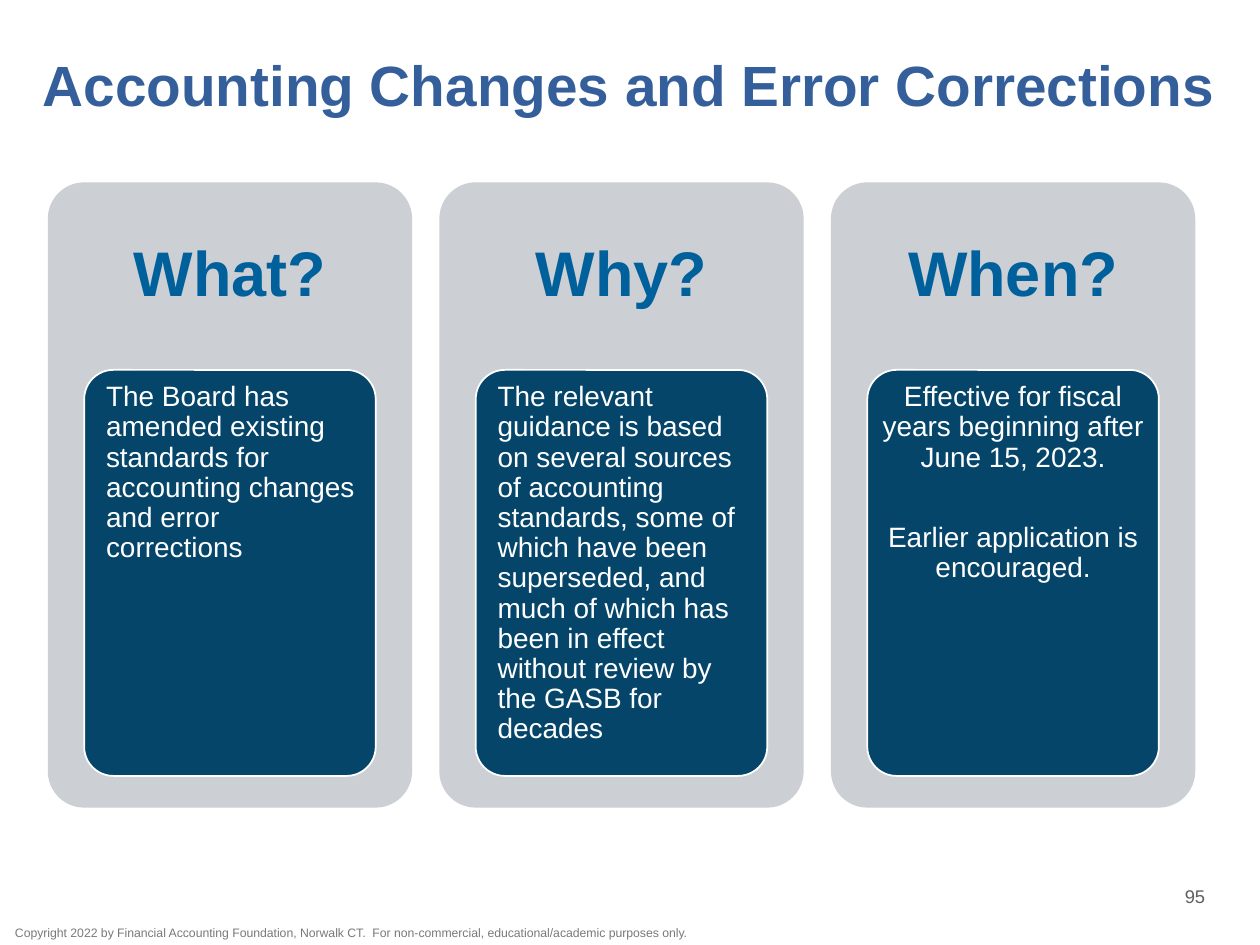
from dataclasses import dataclass

import pptx
import pptx.dml.color
import pptx.enum.shapes
import pptx.enum.text
import pptx.util

Pt = pptx.util.Pt
ALIGN = pptx.enum.text.PP_ALIGN
ANCHOR = pptx.enum.text.MSO_ANCHOR

COLORS = {
    "title": "355F9A",
    "heading": "00609C",
    "card": "CCCFD4",
    "panel": "054569",
    "white": "FFFFFF",
    "number": "5F5F5F",
    "copyright": "78797B",
}


@dataclass(frozen=True)
class Area:
    left: float
    top: float
    width: float
    height: float

    def points(self) -> tuple:
        return Pt(self.left), Pt(self.top), Pt(self.width), Pt(self.height)


@dataclass(frozen=True)
class Style:
    size: float
    color: str
    bold: bool = False
    align: ALIGN = ALIGN.LEFT
    anchor: ANCHOR = ANCHOR.TOP
    insets: tuple = (0, 0, 0, 0)
    line_spacing: object = 1.0
    space_after: float = 0
    indent: float = 0


@dataclass(frozen=True)
class Card:
    heading: str
    body: tuple
    style: Style


TITLE = Style(32.4, "title", bold=True, anchor=ANCHOR.MIDDLE,
              insets=(7.2, 0, 0, 0), line_spacing=Pt(37))
HEADING = Style(36, "heading", bold=True, align=ALIGN.CENTER, anchor=ANCHOR.MIDDLE,
                insets=(10.8, 10.8, 10.8, 10.8), line_spacing=0.9)
BODY_INSETS = (3.2, 2.4, 3.2, 2.4)
BODY = Style(16, "white", insets=BODY_INSETS, line_spacing=0.9, indent=4.5)
CENTERED_BODY = Style(16, "white", align=ALIGN.CENTER, insets=BODY_INSETS,
                      line_spacing=0.9, space_after=28.5)
NUMBER = Style(10.5, "number", align=ALIGN.CENTER, anchor=ANCHOR.MIDDLE,
               insets=(7.2, 3.6, 7.2, 3.6))
COPYRIGHT = Style(7, "copyright")

CARDS = (
    Card("What?", ("The Board has amended existing standards for accounting changes "
                   "and error corrections",), BODY),
    Card("Why?", ("The relevant guidance is based on several sources of accounting "
                  "standards, some of which have been superseded, and much of which "
                  "has been in effect without review by the GASB for decades",), BODY),
    Card("When?", ("Effective for fiscal years beginning after June 15, 2023.",
                   "Earlier application is encouraged."), CENTERED_BODY),
)
CARD_LEFT = 27.3
CARD_TOP = 104.2
CARD_WIDTH = 208.2
CARD_HEIGHT = 357.3
CARD_STEP = 223.75
HEADING_HEIGHT = 107.2
PANEL_MARGIN = 20.8
PANEL_HEIGHT = 232
TEXT_MARGIN = 4.8


def color(name: str) -> pptx.dml.color.RGBColor:
    return pptx.dml.color.RGBColor.from_string(COLORS[name])


def add_text(page, area: Area, texts: tuple, style: Style) -> None:
    frame = page.shapes.add_textbox(*area.points()).text_frame
    frame.word_wrap = True
    frame.vertical_anchor = style.anchor
    (frame.margin_left, frame.margin_top,
     frame.margin_right, frame.margin_bottom) = map(Pt, style.insets)
    for index, text in enumerate(texts):
        para = frame.paragraphs[0] if index == 0 else frame.add_paragraph()
        para.alignment = style.align
        para.line_spacing = style.line_spacing
        para.space_after = Pt(style.space_after)
        if style.indent:
            para._p.get_or_add_pPr().set("marL", str(Pt(style.indent)))
        span = para.add_run()
        span.text = text
        span.font.name = "Arial"
        span.font.size = Pt(style.size)
        span.font.bold = style.bold
        span.font.color.rgb = color(style.color)


def add_rounded(page, area: Area, fill: str, line: str = "") -> None:
    shape = page.shapes.add_shape(
        pptx.enum.shapes.MSO_SHAPE.ROUNDED_RECTANGLE, *area.points())
    shape.adjustments[0] = 0.1
    shape.shadow.inherit = False
    shape.fill.solid()
    shape.fill.fore_color.rgb = color(fill)
    if line:
        shape.line.color.rgb = color(line)
        shape.line.width = Pt(1)
    else:
        shape.line.fill.background()


def add_card(page, card: Card, left: float) -> None:
    panel = Area(left + PANEL_MARGIN, CARD_TOP + HEADING_HEIGHT,
                 CARD_WIDTH - 2 * PANEL_MARGIN, PANEL_HEIGHT)
    body = Area(panel.left + TEXT_MARGIN, panel.top + TEXT_MARGIN,
                panel.width - 2 * TEXT_MARGIN, panel.height - 2 * TEXT_MARGIN)
    add_rounded(page, Area(left, CARD_TOP, CARD_WIDTH, CARD_HEIGHT), "card")
    add_text(page, Area(left, CARD_TOP, CARD_WIDTH, HEADING_HEIGHT),
             (card.heading,), HEADING)
    add_rounded(page, panel, "panel", "white")
    add_text(page, body, card.body, card.style)


def main() -> None:
    deck = pptx.Presentation()
    deck.slide_width, deck.slide_height = Pt(720), Pt(540)
    page = deck.slides.add_slide(deck.slide_layouts[6])
    add_text(page, Area(8.6, 528.5, 391, 10),
             ("Copyright 2022 by Financial Accounting Foundation, Norwalk CT.  "
              "For non-commercial, educational/academic purposes only.",), COPYRIGHT)
    for index, card in enumerate(CARDS):
        add_card(page, card, CARD_LEFT + index * CARD_STEP)
    add_text(page, Area(17.3, 22.3, 692.6, 53.3),
             ("Accounting Changes and Error Corrections",), TITLE)
    add_text(page, Area(645.8, 500.4, 74.2, 23.8), ("95",), NUMBER)
    deck.save("out.pptx")


if __name__ == "__main__":
    main()
